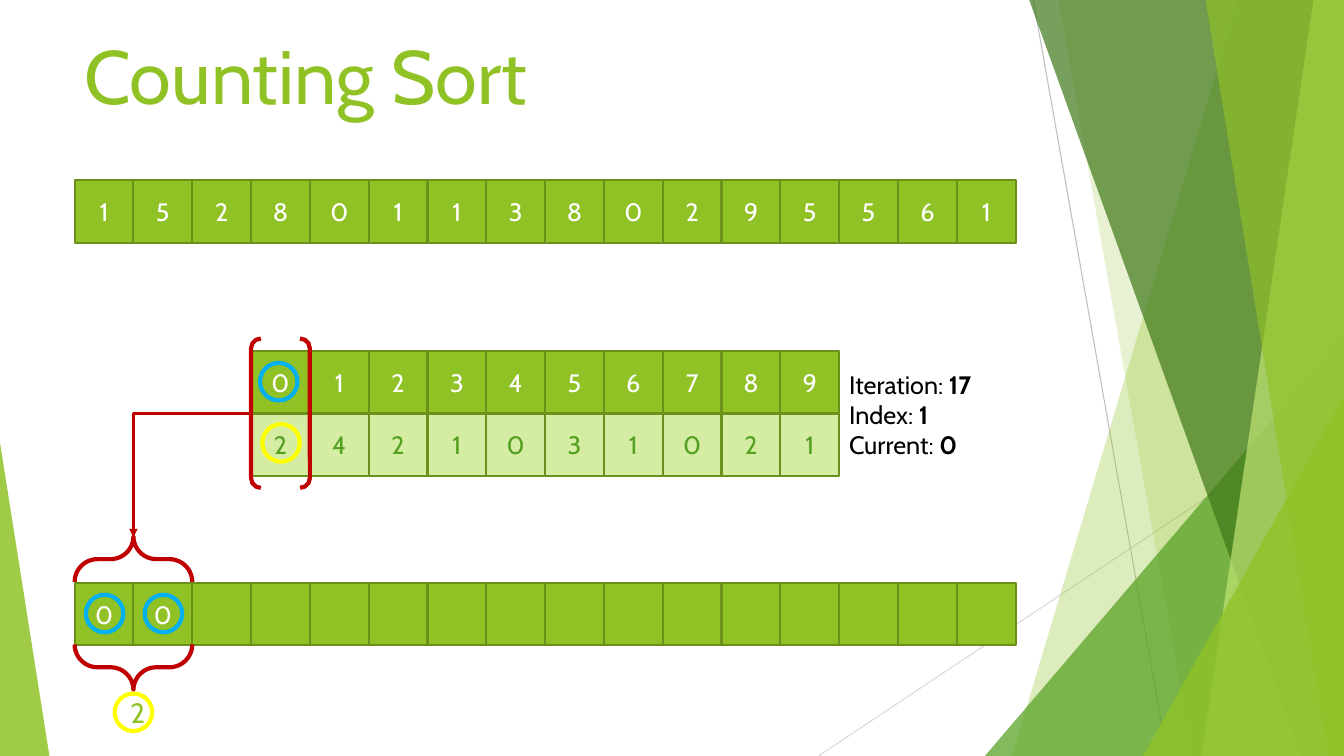
from dataclasses import dataclass
from itertools import chain
from typing import Any, Optional

from pptx import Presentation
from pptx.dml.color import RGBColor
from pptx.enum.shapes import MSO_CONNECTOR, MSO_SHAPE
from pptx.enum.text import MSO_ANCHOR, PP_ALIGN
from pptx.oxml.ns import qn
from pptx.oxml.xmlchemy import OxmlElement
from pptx.util import Inches, Pt

WHITE = RGBColor(0xFF, 0xFF, 0xFF)
BLACK = RGBColor(0, 0, 0)
LIME = RGBColor(0x90, 0xC2, 0x26)
PALE_LIME = RGBColor(0xD5, 0xED, 0xA2)
BRIGHT_LIME = RGBColor(0xC0, 0xE4, 0x74)
OLIVE = RGBColor(0x6B, 0x90, 0x1C)
GREEN = RGBColor(0x54, 0xA0, 0x21)
DARK_GREEN = RGBColor(0x3F, 0x78, 0x19)
RED = RGBColor(0xC0, 0, 0)
BLUE = RGBColor(0, 0xB0, 0xF0)
YELLOW = RGBColor(0xFF, 0xFF, 0)
GREY = RGBColor(0xBF, 0xBF, 0xBF)
LIGHT_GREY = RGBColor(0xD9, 0xD9, 0xD9)

SLIDE_WIDTH, SLIDE_HEIGHT = Inches(13.33), Inches(7.5)
GRID_LEFT, GRID_TOP = Inches(0.74), Inches(1.79)
COLUMN, ROW = Inches(7 / 12), Inches(0.62)
COUNT_COLUMN, INDEX_ROW, COUNT_ROW, OUTPUT_ROW = 3, 2.73, 3.73, 6.44
CIRCLE_SIZE = 0.6 * ROW
BRACE_DEPTH = 0.73 * ROW

BODY_FONT = {"name": "Cabin", "size": Pt(18), "bold": False}
TITLE_FONT = BODY_FONT | {"size": Pt(54)}
TALLY_FONT = BODY_FONT | {"size": Pt(20)}


@dataclass(frozen=True)
class Shard:
    """Background facet reaching the right edge; lengths in percent of the slide."""
    top_x: float
    bottom_x: float
    color: RGBColor
    opacity: int


@dataclass(frozen=True)
class Wedge:
    """Background triangle on the bottom edge; lengths in percent of the slide."""
    left: float
    top: float
    width: float
    apex: float
    color: RGBColor
    opacity: int


@dataclass(frozen=True)
class Ray:
    start: tuple[float, float]
    end: tuple[float, float]
    color: RGBColor


@dataclass(frozen=True)
class Strip:
    """A row of array cells on the grid."""
    column: int
    row: float
    values: list[Any]
    fill: RGBColor
    text: RGBColor


@dataclass(frozen=True)
class Circle:
    """A ring given by its centre on the grid."""
    column: float
    row: float
    color: RGBColor


RAYS = [Ray((76.88, 0), (86.85, 100), GREY), Ray((100, 53.73), (60.9, 100), LIGHT_GREY)]
FACETS = [
    Shard(92.1, 75.3, LIME, 30),
    Shard(78.75, 88.73, LIME, 20),
    Wedge(73.28, 44.4, 26.72, 1, GREEN, 72),
    Shard(76.58, 96.83, DARK_GREEN, 70),
    Shard(97.73, 89.4, BRIGHT_LIME, 70),
    Shard(89.7, 98.85, LIME, 65),
    Wedge(85.05, 52.4, 14.95, 1, LIME, 80),
    Wedge(0, 58.53, 3.68, 0, LIME, 85),
]
STRIPS = [
    Strip(0, 0, [1, 5, 2, 8, 0, 1, 1, 3, 8, 0, 2, 9, 5, 5, 6, 1], LIME, WHITE),
    Strip(COUNT_COLUMN, INDEX_ROW, list(range(10)), LIME, WHITE),
    Strip(COUNT_COLUMN, COUNT_ROW, [2, 4, 2, 1, 0, 3, 1, 0, 2, 1], PALE_LIME, GREEN),
    Strip(0, OUTPUT_ROW, [0, 0] + [""] * 14, LIME, WHITE),
]
CIRCLES = [
    Circle(3.47, 3.22, BLUE), Circle(0.51, 6.93, BLUE), Circle(1.51, 6.93, BLUE),
    Circle(3.51, 4.2, YELLOW), Circle(1, 8.51, YELLOW),
]
BRACES = [(6.06, 90), (7.79, 270)]
STATUS = [("Iteration: ", "17"), ("Index:", " 1"), ("Current:", " 0")]


def share(x: float, y: float) -> tuple[int, int]:
    """Turn percentages of the slide into lengths."""
    return int(SLIDE_WIDTH * x / 100), int(SLIDE_HEIGHT * y / 100)


def cell(column: float, row: float) -> tuple[int, int]:
    """Turn a grid position into slide coordinates."""
    return int(GRID_LEFT + column * COLUMN), int(GRID_TOP + row * ROW)


def span(columns: float, rows: float) -> tuple[int, int]:
    return int(columns * COLUMN), int(rows * ROW)


def paint(shape: Any, fill: Optional[RGBColor] = None, line: Optional[RGBColor] = None,
          weight: float = 3, opacity: int = 100) -> None:
    shape.shadow.inherit = False
    if fill is None:
        shape.fill.background()
    else:
        shape.fill.solid()
        shape.fill.fore_color.rgb = fill
    if opacity < 100:
        alpha = OxmlElement("a:alpha")
        alpha.set("val", str(opacity * 1000))
        next(shape.fill._xPr.iter(qn("a:srgbClr"))).append(alpha)
    if line is None:
        shape.line.fill.background()
    else:
        shape.line.color.rgb = line
        shape.line.width = Pt(weight)


def write(paragraph: Any, text: str, color: RGBColor, font: dict[str, Any]) -> None:
    run = paragraph.add_run()
    run.text = text
    for attribute, value in font.items():
        setattr(run.font, attribute, value)
    run.font.color.rgb = color


def draw_facet(shapes: Any, facet: Shard | Wedge) -> None:
    if isinstance(facet, Shard):
        corners = [share(100, 0), share(100, 100), share(facet.bottom_x, 100)]
        builder = shapes.build_freeform(*share(facet.top_x, 0))
        builder.add_line_segments(corners, close=True)
        outline = builder.convert_to_shape()
    else:
        outline = shapes.add_shape(MSO_SHAPE.ISOSCELES_TRIANGLE, *share(facet.left, facet.top),
                                   *share(facet.width, 100 - facet.top))
        outline.adjustments[0] = facet.apex
    paint(outline, facet.color, opacity=facet.opacity)


def draw_line(shapes: Any, kind: MSO_CONNECTOR, start: tuple[int, int], end: tuple[int, int],
              color: RGBColor, weight: float) -> Any:
    line = shapes.add_connector(kind, *start, *end)
    line.line.color.rgb = color
    line.line.width = Pt(weight)
    line._element.spPr.append(OxmlElement("a:effectLst"))
    return line


def draw_arrow(shapes: Any) -> None:
    """Lead from the count column to the output cells with a single bend."""
    arrow = draw_line(shapes, MSO_CONNECTOR.ELBOW, cell(COUNT_COLUMN, COUNT_ROW), cell(1, 5.71), RED, 2)
    arrow._element.spPr.find(qn("a:prstGeom")).set("prst", "bentConnector2")
    head = OxmlElement("a:tailEnd")
    head.set("type", "triangle")
    arrow.line._get_or_add_ln().append(head)


def draw_strip(shapes: Any, strip: Strip) -> None:
    for offset, value in enumerate(strip.values):
        box = shapes.add_shape(MSO_SHAPE.RECTANGLE, *cell(strip.column + offset, strip.row), *span(1, 1))
        paint(box, strip.fill, OLIVE, 1.5)
        box.text_frame.vertical_anchor = MSO_ANCHOR.MIDDLE
        if value != "":
            paragraph = box.text_frame.paragraphs[0]
            paragraph.alignment = PP_ALIGN.CENTER
            write(paragraph, str(value), strip.text, BODY_FONT)


def draw_circle(shapes: Any, circle: Circle) -> None:
    x, y = cell(circle.column, circle.row)
    size, radius = int(CIRCLE_SIZE), int(CIRCLE_SIZE / 2)
    paint(shapes.add_shape(MSO_SHAPE.OVAL, x - radius, y - radius, size, size), line=circle.color)


def draw_brace(shapes: Any, row: float, rotation: int) -> None:
    x, y = cell(1, row)
    brace = shapes.add_shape(MSO_SHAPE.LEFT_BRACE, int(x - BRACE_DEPTH / 2), y - COLUMN,
                             int(BRACE_DEPTH), 2 * COLUMN)
    brace.rotation = rotation
    brace.adjustments[0] = 0.5
    paint(brace, line=RED)


def main() -> None:
    deck = Presentation()
    deck.slide_width, deck.slide_height = SLIDE_WIDTH, SLIDE_HEIGHT
    shapes = deck.slides.add_slide(deck.slide_layouts[6]).shapes

    for ray in RAYS:
        draw_line(shapes, MSO_CONNECTOR.STRAIGHT, share(*ray.start), share(*ray.end), ray.color, 0.75)
    for facet in FACETS:
        draw_facet(shapes, facet)

    title = shapes.add_textbox(*share(5.55, 3.2), *share(70.5, 22.67)).text_frame
    title.word_wrap = True
    write(title.paragraphs[0], "Counting Sort", LIME, TITLE_FONT)

    for strip in STRIPS:
        draw_strip(shapes, strip)
    bracket = shapes.add_shape(MSO_SHAPE.DOUBLE_BRACKET, *cell(COUNT_COLUMN, 2.53), *span(1, 2.39))
    paint(bracket, line=RED)
    for row, rotation in BRACES:
        draw_brace(shapes, row, rotation)
    draw_arrow(shapes)

    tally = shapes.add_textbox(*cell(0.78, 8.16), *span(0.5, 0.71)).text_frame
    tally.word_wrap = False
    tally.paragraphs[0].alignment = PP_ALIGN.CENTER
    write(tally.paragraphs[0], "2", LIME, TALLY_FONT)
    for circle in CIRCLES:
        draw_circle(shapes, circle)

    status = shapes.add_textbox(*cell(13, 2.94), *span(3, 1.63)).text_frame
    status.word_wrap = True
    lines = chain(status.paragraphs, (status.add_paragraph() for _ in STATUS[1:]))
    for paragraph, (label, value) in zip(lines, STATUS):
        write(paragraph, label, BLACK, BODY_FONT)
        write(paragraph, value, BLACK, BODY_FONT | {"bold": True})

    deck.save("out.pptx")


if __name__ == "__main__":
    main()
